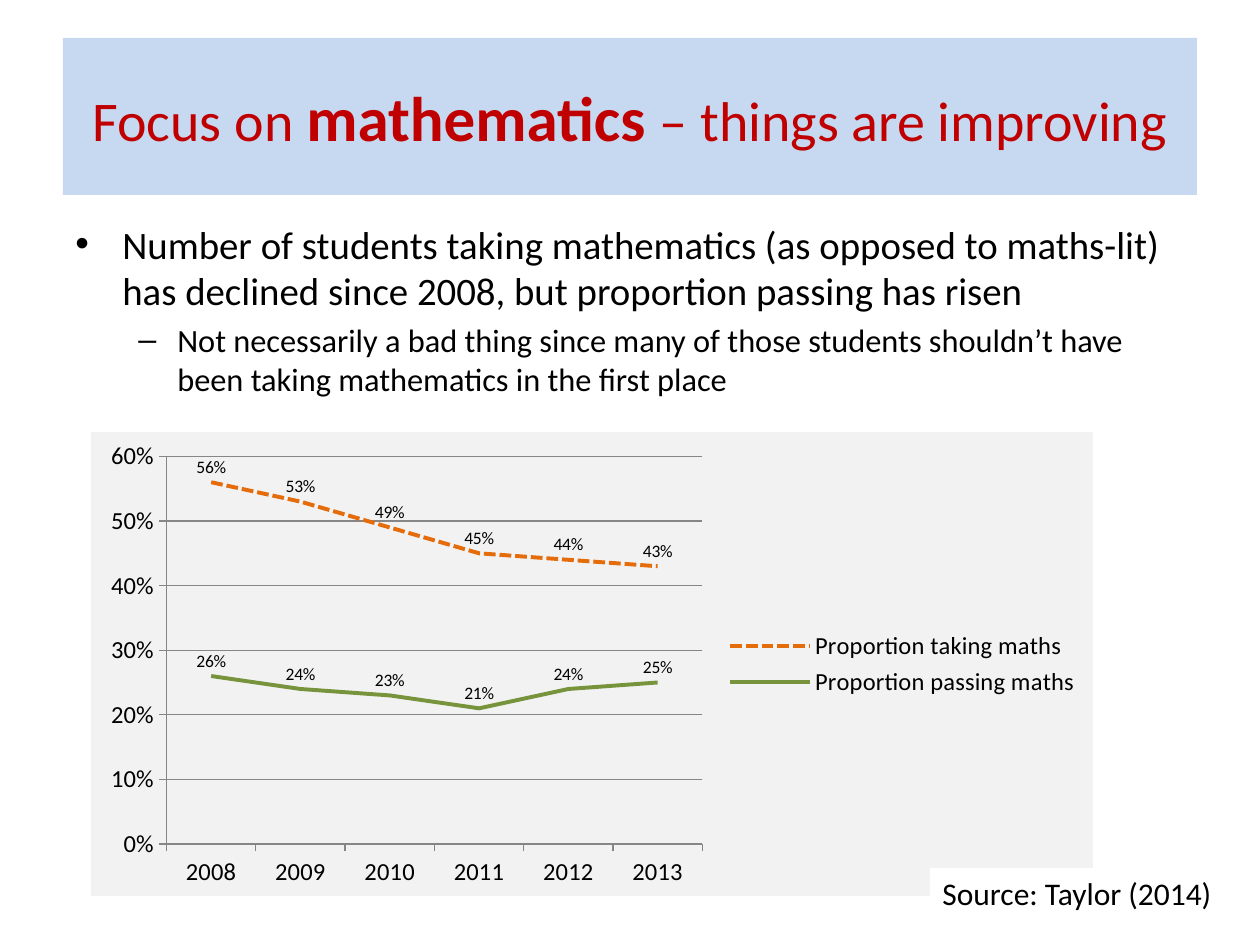
from lxml import etree
from pptx import Presentation
from pptx import util as u
from pptx.chart.data import CategoryChartData
from pptx.dml.color import RGBColor
from pptx.enum import chart as ch, dml, shapes, text
from pptx.oxml.ns import qn

SCALE = 914400 / 126
FONT = "Calibri"
HUES = {
    "band": "C6D9F1", "title": "C00000", "ink": "000000", "paper": "FFFFFF",
    "panel": "F2F2F2", "grid": "868686", "taking": "E46C0A", "passing": "77933C",
}
YEARS = ["2008", "2009", "2010", "2011", "2012", "2013"]
SERIES = [
    ("Proportion taking maths", [0.56, 0.53, 0.49, 0.45, 0.44, 0.43], "taking", dml.MSO_LINE.SQUARE_DOT),
    ("Proportion passing maths", [0.26, 0.24, 0.23, 0.21, 0.24, 0.25], "passing", None),
]


def px(n):
    return u.Emu(round(n * SCALE))


def rgb(hue):
    return RGBColor.from_string(HUES[hue])


def put(item, **vals):
    for key, val in vals.items():
        setattr(item, key, val)


def style(font, size, hue="ink", bold=False):
    put(font, name=FONT, size=u.Pt(size), bold=bold)
    font.color.rgb = rgb(hue)


def add_run(para, words, *look):
    run = para.add_run()
    run.text = words
    style(run.font, *look)


def add_box(slide, box, hue, anchor):
    shape = slide.shapes.add_shape(shapes.MSO_SHAPE.RECTANGLE, *map(px, box))
    shape.shadow.inherit = False
    shape.fill.solid()
    shape.fill.fore_color.rgb = rgb(hue)
    shape.line.fill.background()
    put(shape.text_frame, word_wrap=True, vertical_anchor=anchor)
    return shape.text_frame.paragraphs[0]


def add_title(slide):
    para = add_box(slide, (63, 38, 1134, 157), "band", text.MSO_ANCHOR.MIDDLE)
    para.alignment = text.PP_ALIGN.CENTER
    add_run(para, "Focus on ", 32, "title")
    add_run(para, "mathematics ", 36, "title", True)
    add_run(para, "– things are improving", 32, "title")


def add_list(slide, box, items):
    frame = slide.shapes.add_textbox(*map(px, box)).text_frame
    frame.word_wrap = True
    for i, (words, mark, size, left, hang) in enumerate(items):
        para = frame.add_paragraph() if i else frame.paragraphs[0]
        put(para, level=i, space_before=u.Pt(round(size * 0.2, 1)))
        add_run(para, words, size)
        props = para._p.get_or_add_pPr()
        props.set("marL", str(px(left)))
        props.set("indent", str(px(-hang)))
        etree.SubElement(props, qn("a:buFont")).set("typeface", "Arial")
        etree.SubElement(props, qn("a:buChar")).set("char", mark)


def fill_area(parent, before):
    props = parent.makeelement(qn("c:spPr"))
    fill = etree.SubElement(props, qn("a:solidFill"))
    etree.SubElement(fill, qn("a:srgbClr")).set("val", HUES["panel"])
    line = etree.SubElement(props, qn("a:ln"))
    etree.SubElement(line, qn("a:noFill"))
    spot = parent.find(qn(before)) if before else None
    if spot is None:
        parent.append(props)
    else:
        spot.addprevious(props)


def set_line(line, hue, width, dash=None):
    line.color.rgb = rgb(hue)
    put(line, width=u.Pt(width), dash_style=dash)


def add_chart(slide, box):
    data = CategoryChartData(number_format="0%")
    data.categories = YEARS
    for name, vals, _, _ in SERIES:
        data.add_series(name, vals)
    chart = slide.shapes.add_chart(ch.XL_CHART_TYPE.LINE, *map(px, box), data).chart
    style(chart.font, 10)
    put(chart, has_title=False, has_legend=True)
    put(chart.legend, position=ch.XL_LEGEND_POSITION.RIGHT, include_in_layout=False)
    style(chart.legend.font, 14)
    chart.plots[0].vary_by_categories = False

    for axis in (chart.category_axis, chart.value_axis):
        put(axis, major_tick_mark=ch.XL_TICK_MARK.OUTSIDE, minor_tick_mark=ch.XL_TICK_MARK.NONE)
        style(axis.tick_labels.font, 14)
        set_line(axis.format.line, "grid", 0.75)
    axis = chart.value_axis
    put(axis, minimum_scale=0, maximum_scale=0.6, major_unit=0.1, has_major_gridlines=True)
    put(axis.tick_labels, number_format="0%", number_format_is_linked=False)
    set_line(axis.major_gridlines.format.line, "grid", 0.75)

    for line, (_, _, hue, dash) in zip(chart.plots[0].series, SERIES):
        line.smooth = False
        line.marker.style = ch.XL_MARKER_STYLE.NONE
        set_line(line.format.line, hue, 2.25, dash)
        put(line.data_labels, show_value=True, position=ch.XL_LABEL_POSITION.ABOVE,
            number_format="0%", number_format_is_linked=False)
        style(line.data_labels.font, 10)

    root = chart._chartSpace
    fill_area(root.find(qn("c:chart")).find(qn("c:plotArea")), None)
    fill_area(root, "c:txPr")


def main():
    deck = Presentation()
    put(deck, slide_width=px(1260), slide_height=px(945))
    slide = deck.slides.add_slide(deck.slide_layouts[6])
    add_title(slide)
    add_list(slide, (63, 214, 1134, 218), [
        ("Number of students taking mathematics (as opposed to maths-lit) has declined "
         "since 2008, but proportion passing has risen", "•", 22.2, 47, 47),
        ("Not necessarily a bad thing since many of those students shouldn’t have been "
         "taking mathematics in the first place", "–", 18.5, 102, 39),
    ])
    add_chart(slide, (91, 432, 1002, 464))
    note = add_box(slide, (930, 868, 328, 51), "paper", text.MSO_ANCHOR.TOP)
    note.alignment = text.PP_ALIGN.LEFT
    add_run(note, "Source: Taylor (2014)", 18)
    deck.save("out.pptx")


if __name__ == "__main__":
    main()
